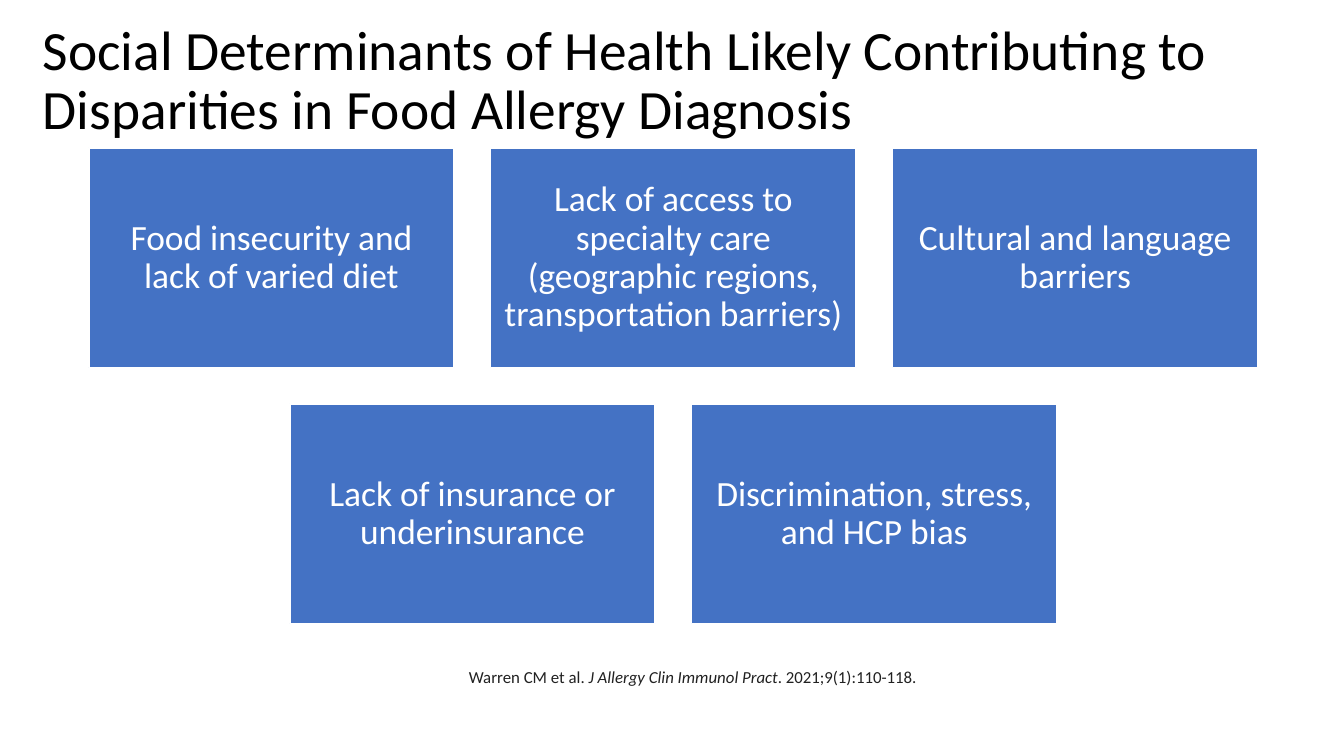
import pptx
import pptx.util
import pptx.dml.color
import pptx.enum.shapes
import pptx.enum.text

Inches = pptx.util.Inches
Pt = pptx.util.Pt
Align = pptx.enum.text.PP_ALIGN
Anchor = pptx.enum.text.MSO_ANCHOR

COLORS = {"title": "000000", "card": "4472C4", "white": "FFFFFF", "cite": "212121"}
TITLE = "Social Determinants of Health Likely Contributing to Disparities in Food Allergy Diagnosis"
ROWS = [
    [
        "Food insecurity and lack of varied diet",
        "Lack of access to specialty care (geographic regions, transportation barriers)",
        "Cultural and language barriers",
    ],
    ["Lack of insurance or underinsurance", "Discrimination, stress, and HCP bias"],
]
CITE = [
    ("Warren CM et al. ", False),
    ("J Allergy Clin Immunol Pract", True),
    (". 2021;9(1):110-118.", False),
]


def color(name):
    return pptx.dml.color.RGBColor.from_string(COLORS[name])


def write(shape, text, size, ink, align=Align.LEFT, anchor=Anchor.TOP, inset=None):
    frame = shape.text_frame
    frame.word_wrap = True
    frame.vertical_anchor = anchor
    if inset is not None:
        frame.margin_left = frame.margin_right = Inches(inset)
        frame.margin_top = frame.margin_bottom = Inches(inset)
    para = frame.paragraphs[0]
    para.alignment = align
    para.line_spacing = 0.9
    runs = [(text, False)] if isinstance(text, str) else text
    for words, slant in runs:
        run = para.add_run()
        run.text = words
        run.font.name = "Calibri"
        run.font.size = Pt(size)
        run.font.italic = slant
        run.font.color.rgb = color(ink)


def add_text(slide, box, text, **style):
    shape = slide.shapes.add_textbox(*map(Inches, box))
    write(shape, text, **style)


def add_card(slide, box, text):
    card = slide.shapes.add_shape(
        pptx.enum.shapes.MSO_SHAPE.RECTANGLE, *map(Inches, box)
    )
    card.shadow.inherit = False
    card.fill.solid()
    card.fill.fore_color.rgb = color("card")
    card.line.color.rgb = color("white")
    card.line.width = Pt(1)
    write(card, text, size=19, ink="white", align=Align.CENTER,
          anchor=Anchor.MIDDLE, inset=0.08)


def add_grid(slide, box, rows, gap=0.27):
    left, top, width, height = box
    most = max(map(len, rows))
    wide = (width - gap * (most - 1)) / most
    high = (height - gap * (len(rows) - 1)) / len(rows)
    for r, row in enumerate(rows):
        start = left + (most - len(row)) * (wide + gap) / 2
        for c, text in enumerate(row):
            place = (start + c * (wide + gap), top + r * (high + gap), wide, high)
            add_card(slide, place, text)


def main():
    deck = pptx.Presentation()
    deck.slide_width = Inches(10)
    deck.slide_height = Inches(10 * 9 / 16)
    slide = deck.slides.add_slide(deck.slide_layouts[6])
    add_text(slide, (0.22, 0.14, 9.58, 0.94), TITLE, size=29.7, ink="title",
             anchor=Anchor.MIDDLE)
    add_grid(slide, (0.66, 1.1, 8.7, 3.54), ROWS)
    add_text(slide, (3.39, 4.93, 6.61, 0.6), CITE, size=9, ink="cite")
    deck.save("out.pptx")


if __name__ == "__main__":
    main()
